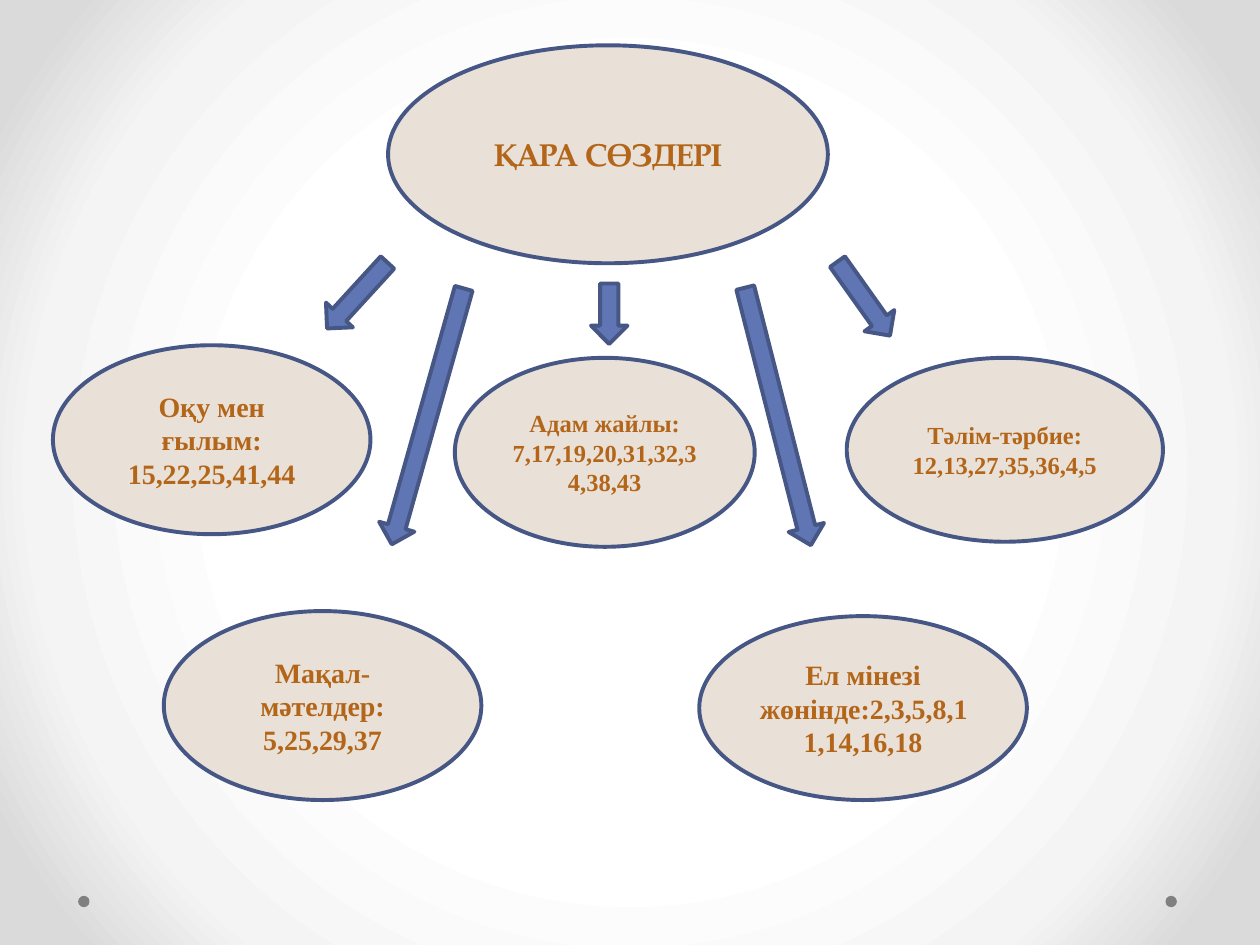
"""Build a one-slide diagram that groups the prose works by theme."""
from lxml import etree
from pptx import Presentation
from pptx.dml import color
from pptx.enum import shapes, text
from pptx.oxml import ns
from pptx.util import Inches, Pt

COLORS = {"oval": "E9E0D7", "line": "475785", "arrow": "6076B4", "text": "B36619", "dot": "808080"}
BACKDROP = [(50, "FFFFFF"), (76, "F4F4F4"), (92, "DADADA")]
SERIF = "Times New Roman"
KIND = shapes.MSO_SHAPE

deck = Presentation()
deck.slide_width, deck.slide_height = Inches(10), Inches(7.5)
page = deck.slides.add_slide(deck.slide_layouts[6])

page.background.fill.gradient()
gradient = page.background._cSld.find(".//" + ns.qn("a:gradFill"))
for child in list(gradient):
    gradient.remove(child)
stops = etree.SubElement(gradient, ns.qn("a:gsLst"))
for position, shade in BACKDROP:
    stop = etree.SubElement(stops, ns.qn("a:gs"), pos=str(position * 1000))
    etree.SubElement(stop, ns.qn("a:srgbClr"), val=shade)
circle = etree.SubElement(gradient, ns.qn("a:path"), path="circle")
etree.SubElement(circle, ns.qn("a:fillToRect"), **dict.fromkeys("ltrb", "50000"))


def add_shape(kind, bounds, fill, outlined=True):
    shape = page.shapes.add_shape(kind, *map(Inches, bounds))
    shape.shadow.inherit = False
    shape.fill.solid()
    shape.fill.fore_color.rgb = color.RGBColor.from_string(COLORS[fill])
    if outlined:
        shape.line.color.rgb = color.RGBColor.from_string(COLORS["line"])
        shape.line.width = Pt(2.25)
    else:
        shape.line.fill.background()
    return shape


for left in (9.25, 0.62):
    add_shape(KIND.OVAL, (left, 7.11, 0.09, 0.09), "dot", outlined=False)

ovals = [
    ((3.08, 0.36, 3.49, 1.73), "ҚАРА СӨЗДЕРІ", 18, "TeX Gyre Pagella"),
    ((3.61, 2.84, 2.38, 1.5), "Адам жайлы: 7,17,19,20,31,32,34,38,43", 14, SERIF),
    ((0.42, 2.74, 2.52, 1.5), "Оқу мен ғылым: 15,22,25,41,44", 16, SERIF),
    ((6.72, 2.84, 2.51, 1.46), "Тәлім-тәрбие: 12,13,27,35,36,4,5", 14, SERIF),
    ((1.3, 4.85, 2.52, 1.5), "Мақал-мәтелдер: 5,25,29,37", 16, SERIF),
    ((5.55, 4.89, 2.6, 1.46), "Ел мінезі жөнінде:2,3,5,8,11,14,16,18", 16, SERIF),
]
for bounds, words, size, font in ovals:
    box = add_shape(KIND.OVAL, bounds, "oval").text_frame
    box.word_wrap = True
    box.vertical_anchor = text.MSO_ANCHOR.MIDDLE
    para = box.paragraphs[0]
    para.alignment = text.PP_ALIGN.CENTER
    span = para.add_run()
    span.text = words
    for name, value in {"name": font, "size": Pt(size), "bold": True}.items():
        setattr(span.font, name, value)
    span.font.color.rgb = color.RGBColor.from_string(COLORS["text"])

arrows = [
    (4.69, 2.25, 0.48, 0),
    (2.69, 1.99, 0.71, 42.5),
    (6.71, 2.01, 0.72, 324.6),
    (3.25, 2.25, 2.11, 15.7),
    (6.03, 2.25, 2.11, 345.7),
]
for left, top, length, angle in arrows:
    arrow = add_shape(KIND.DOWN_ARROW, (left, top, 0.29, length), "arrow")
    arrow.rotation = angle

deck.save("out.pptx")
